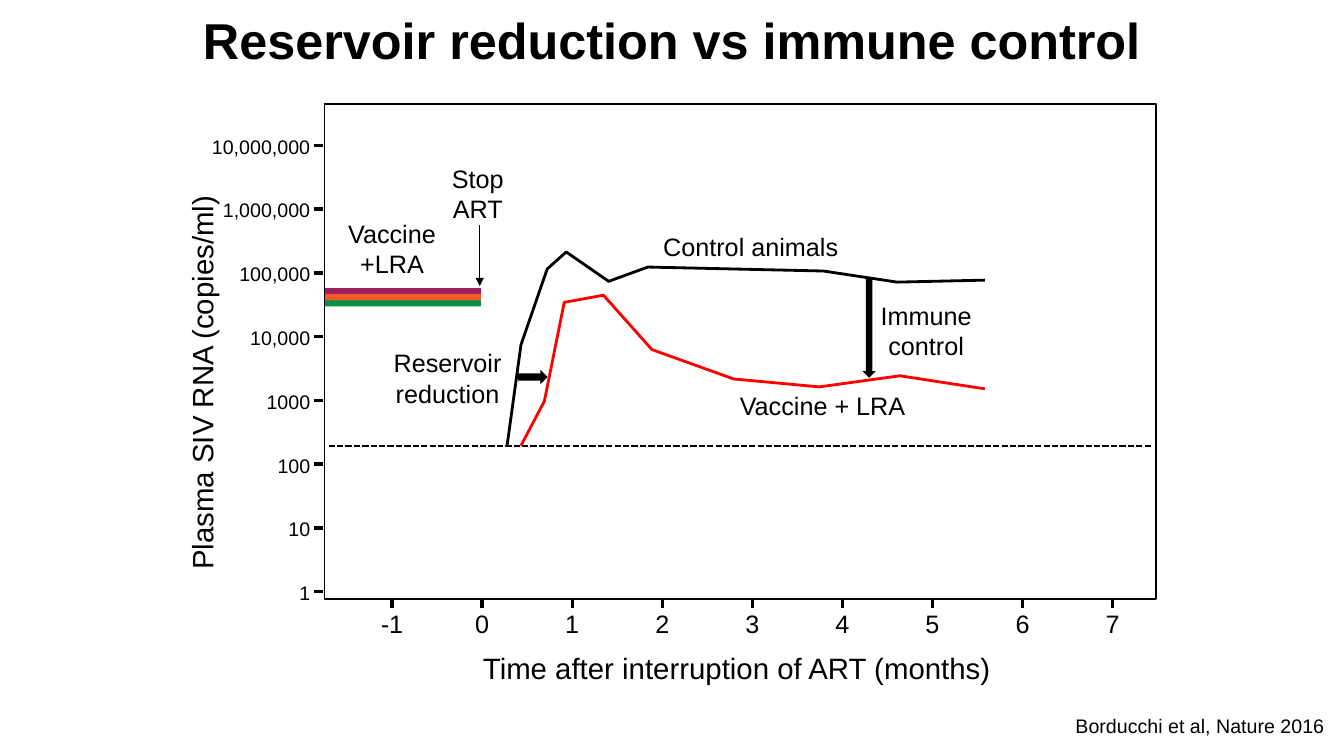
"""Build the slide on reservoir reduction versus immune control."""
from lxml import etree
from pptx import Presentation
from pptx.dml.color import RGBColor
from pptx.enum import dml, shapes, text
from pptx.oxml import ns
from pptx.util import Cm, Pt

COLORS = {"black": "000000", "red": "FF0000", "orange": "F15B26",
          "purple": "9D1F60", "green": "009247"}
LEFT, CENTER, RIGHT = text.PP_ALIGN.LEFT, text.PP_ALIGN.CENTER, text.PP_ALIGN.RIGHT
KIND = shapes.MSO_SHAPE
FRAME_LEFT, FRAME_TOP, FRAME_WIDTH, FRAME_HEIGHT = 8.18, 2.62, 20.96, 12.47
FRAME_BOTTOM = FRAME_TOP + FRAME_HEIGHT

prs = Presentation()
prs.slide_width, prs.slide_height = Cm(33.87), Cm(19.05)
s = prs.slides.add_slide(prs.slide_layouts[5])


def add_label(words, left, top, width, height, size=18, align=CENTER):
    sp = s.shapes.add_textbox(Cm(left), Cm(top), Cm(width), Cm(height))
    tf = sp.text_frame
    tf.word_wrap = True
    tf.margin_left = tf.margin_right = tf.margin_top = tf.margin_bottom = 0
    tf.text = words
    for p in tf.paragraphs:
        p.alignment = align
        p.font.name, p.font.size = "Arial", Pt(size)
        p.font.color.rgb = RGBColor.from_string(COLORS["black"])
    return sp


def add_line(x1, y1, x2, y2, width):
    sp = s.shapes.add_connector(shapes.MSO_CONNECTOR.STRAIGHT, Cm(x1), Cm(y1), Cm(x2), Cm(y2))
    sp.line.width = Pt(width)
    sp.line.color.rgb = RGBColor.from_string(COLORS["black"])
    etree.SubElement(sp._element.spPr, ns.qn("a:effectLst"))
    return sp


title = s.shapes.title
title.left, title.top, title.width, title.height = Cm(3.18), Cm(0.08), Cm(27.51), Cm(1.8)
title.text_frame.text = "Reservoir reduction vs immune control"
title.text_frame.vertical_anchor = text.MSO_ANCHOR.MIDDLE
p = title.text_frame.paragraphs[0]
p.alignment = CENTER
p.font.name, p.font.size, p.font.bold = "Arial", Pt(36), True
p.font.color.rgb = RGBColor.from_string(COLORS["black"])

for kind, color, left, top, width, height in [
    (KIND.RECTANGLE, "orange", FRAME_LEFT, 7.37, 3.94, 0.23),
    (KIND.RECTANGLE, "purple", FRAME_LEFT, 7.26, 3.94, 0.15),
    (KIND.RECTANGLE, "green", FRAME_LEFT, 7.57, 3.94, 0.15),
    (KIND.RIGHT_ARROW, "black", 13.06, 9.32, 0.74, 0.36),
    (KIND.DOWN_ARROW, "black", 21.74, 7.01, 0.33, 2.51),
]:
    sp = s.shapes.add_shape(kind, Cm(left), Cm(top), Cm(width), Cm(height))
    sp.shadow.inherit = False
    sp.fill.solid()
    sp.fill.fore_color.rgb = RGBColor.from_string(COLORS[color])
    sp.line.fill.background()

frame = s.shapes.add_shape(KIND.RECTANGLE, Cm(FRAME_LEFT), Cm(FRAME_TOP),
                           Cm(FRAME_WIDTH), Cm(FRAME_HEIGHT))
frame.shadow.inherit = False
frame.fill.background()
frame.line.width = Pt(1.13)
frame.line.color.rgb = RGBColor.from_string(COLORS["black"])

y_values = ["1", "10", "100", "1000", "10,000", "100,000", "1,000,000", "10,000,000"]
for i, value in enumerate(y_values):
    y = 14.91 - 1.607 * i
    add_line(7.92, y, 8.15, y, 2.38)
    add_label(value, 5.02, y - 0.27, 2.8, 0.61, 14, RIGHT)

for month in range(-1, 8):
    x = 12.15 + 2.27 * month
    add_line(x, FRAME_BOTTOM + 0.23, x, FRAME_BOTTOM, 2.38)
    add_label(str(month), x - 0.5, 15.34, 1, 0.76)

limit = add_line(8.28, 11.23, 29.01, 11.23, 1.5)
limit.line.dash_style = dml.MSO_LINE.SQUARE_DOT
stop = add_line(12.09, 5.66, 12.09, 7.21, 0.75)
etree.SubElement(stop.line._get_or_add_ln(), ns.qn("a:tailEnd"), type="triangle")

curves = {
    "red": [(13.13, 11.23), (13.72, 10.11), (14.22, 7.62), (15.21, 7.44), (16.43, 8.81),
            (18.49, 9.55), (20.65, 9.75), (22.68, 9.47), (24.82, 9.8)],
    "black": [(12.78, 11.23), (13.13, 8.69), (13.79, 6.78), (14.27, 6.35), (15.34, 7.09),
              (16.33, 6.73), (20.75, 6.83), (22.61, 7.11), (24.82, 7.06)],
}
for color, points in curves.items():
    start, *rest = [(Cm(x), Cm(y)) for x, y in points]
    builder = s.shapes.build_freeform(*start)
    builder.add_line_segments(rest, close=False)
    sp = builder.convert_to_shape()
    sp.shadow.inherit = False
    sp.fill.background()
    sp.line.width = Pt(2)
    sp.line.color.rgb = RGBColor.from_string(COLORS[color])

for words, left, top, width, height in [
    ("Stop\nART", 11.04, 4.11, 2, 1.54),
    ("Vaccine\n+LRA", 7.01, 5.49, 5.74, 1.54),
    ("Control animals", 16.05, 5.82, 5.74, 0.77),
    ("Vaccine + LRA", 17.86, 9.83, 5.74, 0.77),
    ("Reservoir\nreduction", 8.41, 8.76, 5.74, 1.54),
    ("Immune\ncontrol", 20.47, 7.57, 5.74, 1.54),
]:
    add_label(words, left, top, width, height)

add_label("Time after interruption of ART (months)", 12.17, 16.38, 13.2, 0.89, 21, LEFT)
y_title = add_label("Plasma SIV RNA (copies/ml)", 0.28, 9.2, 9.6, 0.89, 21)
y_title.rotation = 270
add_label("Borducchi et al, Nature 2016", 26.38, 17.98, 7, 0.61, 14, RIGHT)

prs.save("out.pptx")
